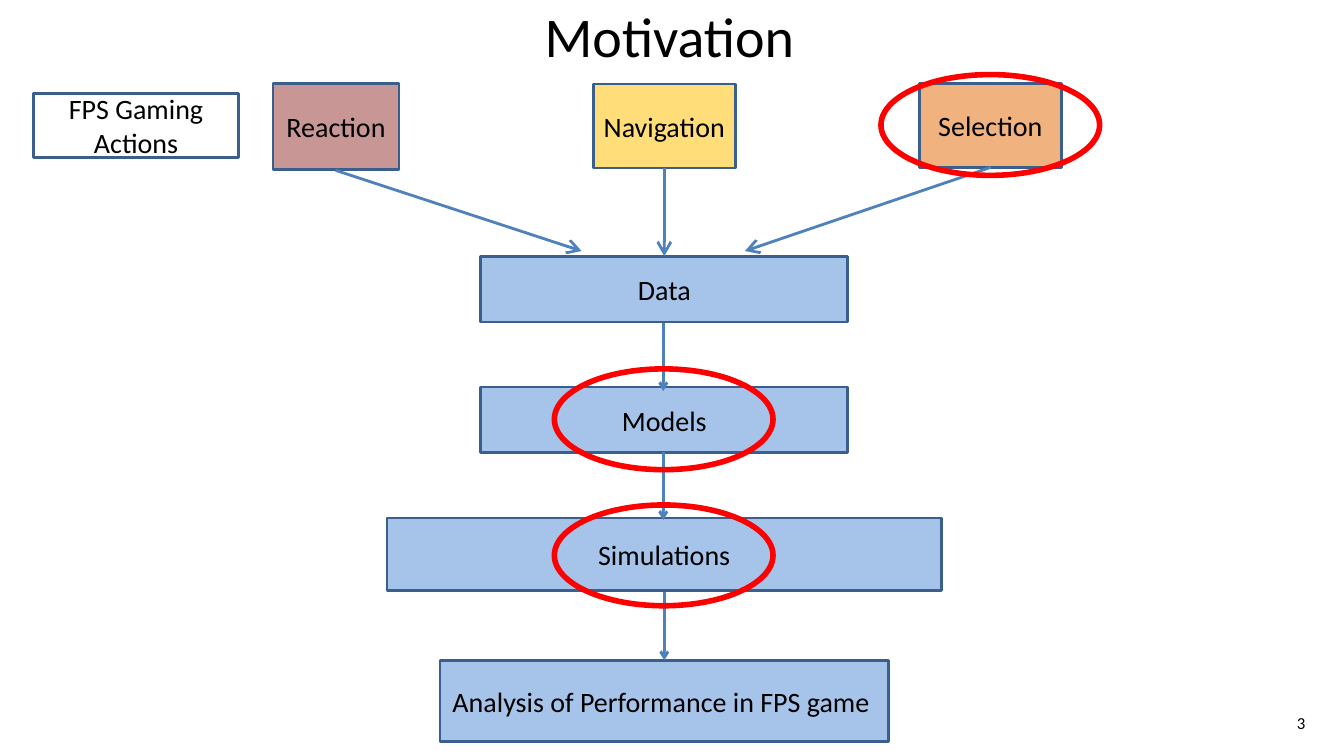
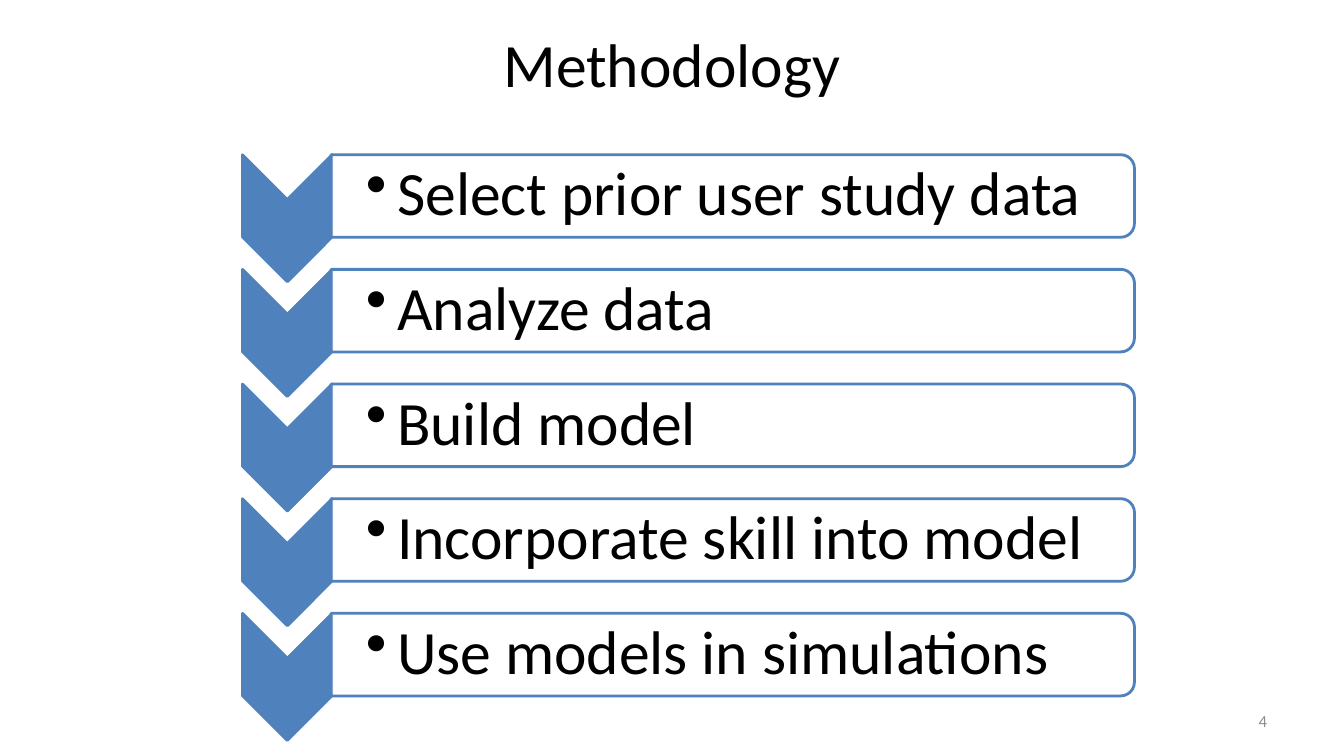
"""Build the motivation and methodology slides of a talk on first-person shooter games."""
from dataclasses import dataclass

from lxml.etree import SubElement
from pptx import Presentation
from pptx.dml.color import RGBColor
from pptx.enum.shapes import MSO_CONNECTOR, MSO_SHAPE
from pptx.enum.text import MSO_ANCHOR, PP_ALIGN
from pptx.oxml.ns import qn
from pptx.util import Pt

RECT, OVAL = MSO_SHAPE.RECTANGLE, MSO_SHAPE.OVAL
CHEVRON, TAB = MSO_SHAPE.CHEVRON, MSO_SHAPE.ROUND_2_SAME_RECTANGLE
STRAIGHT = MSO_CONNECTOR.STRAIGHT
LEFT, CENTER, RIGHT = PP_ALIGN.LEFT, PP_ALIGN.CENTER, PP_ALIGN.RIGHT
TOP, MIDDLE = MSO_ANCHOR.TOP, MSO_ANCHOR.MIDDLE


@dataclass(frozen=True)
class Theme:
    font: str = "Calibri"
    black: str = "000000"
    white: str = "FFFFFF"
    gray: str = "8C8C8C"
    blue: str = "4F81BD"
    edge: str = "3A5F8C"
    sky: str = "558ED5"
    wine: str = "953735"
    gold: str = "FFC000"
    orange: str = "E46C0A"
    red: str = "FF0000"
    small: int = 12
    label: int = 20
    title: int = 40
    large: int = 44
    line: int = 2
    ring: int = 4


theme = Theme()


def paint(shape, fill, line, width=theme.line, alpha=100):
    shape.shadow.inherit = False
    shape.line.color.rgb = RGBColor.from_string(line)
    shape.line.width = Pt(width)
    if fill is None:
        shape.fill.background()
        return
    shape.fill.solid()
    shape.fill.fore_color.rgb = RGBColor.from_string(fill)
    if alpha < 100:
        tint = next(shape.element.spPr.iter(qn("a:srgbClr")))
        SubElement(tint, qn("a:alpha"), val=str(alpha * 1000))


def write(shape, text, size, color=theme.black, align=CENTER, anchor=MIDDLE):
    frame = shape.text_frame
    frame.text = text
    frame.word_wrap = True
    frame.vertical_anchor = anchor
    para = frame.paragraphs[0]
    para.alignment = align
    para.font.name = theme.font
    para.font.size = Pt(size)
    para.font.color.rgb = RGBColor.from_string(color)
    return para


deck = Presentation()
deck.slide_width, deck.slide_height = Pt(960), Pt(540)

heads = [
    ("Motivation", theme.title, TOP, (0, -2.2, 956.2, 97.2),
     "3", theme.black, (723.6, 501.8, 216, 28.8)),
    ("Methodology", theme.large, MIDDLE, (48, 0, 864, 90),
     "4", theme.gray, (688.3, 500.4, 223.9, 28.8)),
]
slides = []
for text, size, anchor, place, number, color, corner in heads:
    slide = deck.slides.add_slide(deck.slide_layouts[5])
    title = slide.shapes.title
    title.left, title.top, title.width, title.height = map(Pt, place)
    write(title, text, size, anchor=anchor)
    page = slide.shapes.add_textbox(*map(Pt, corner))
    write(page, number, theme.small, color, RIGHT)
    slides.append(slide)

flow = slides[0].shapes
axis = 474.5
boxes = [
    ("FPS Gaming Actions", theme.white, 97.2, 67, 146.9, 45.4),
    ("Reaction", theme.wine, 240, 59.8, 90, 61.4),
    ("Navigation", theme.gold, axis, 60, 101.5, 60),
    ("Selection", theme.orange, 707.4, 59.8, 101.5, 60),
    ("Data", theme.sky, axis, 183, 262, 47),
    ("Models", theme.sky, axis, 276.5, 262, 47),
    ("Simulations", theme.sky, axis, 370, 396, 52),
    ("Analysis of Performance in FPS game ", theme.sky, axis, 471.6, 320.4, 58.3),
]
for text, fill, mid, top, width, height in boxes:
    box = flow.add_shape(RECT, Pt(mid - width / 2), Pt(top), Pt(width), Pt(height))
    paint(box, fill, theme.edge, alpha=52)
    write(box, text, theme.label)
    box.text_frame.margin_left = box.text_frame.margin_right = Pt(5)

arrows = [
    (239.8, 121.7, 415.4, 179.3, "lg"),
    (axis, 120.2, axis, 183, "lg"),
    (707.8, 119.5, 532.1, 179.3, "lg"),
    (473.8, 230.4, 473.8, 279.4, "med"),
    (473.8, 322.6, 473.8, 371.5, "med"),
    (axis, 422.6, axis, 471.6, "med"),
]
for *ends, size in arrows:
    arrow = flow.add_connector(STRAIGHT, *map(Pt, ends))
    arrow.line.color.rgb = RGBColor.from_string(theme.blue)
    arrow.line.width = Pt(theme.line)
    props = arrow.element.spPr
    SubElement(props.find(qn("a:ln")), qn("a:tailEnd"), type="arrow", w=size, len=size)
    SubElement(props, qn("a:effectLst"))

for left, top in [(629.3, 53.3), (396, 263.5), (396, 360.7)]:
    ring = flow.add_shape(OVAL, Pt(left), Pt(top), Pt(156.2), Pt(72))
    paint(ring, None, theme.red, theme.ring)

steps = [
    "Select prior user study data",
    "Analyze data",
    "Build model",
    "Incorporate skill into model",
    "Use models in simulations",
]
for index, text in enumerate(steps):
    mid = 140 + 81.9 * index
    parts = [
        (CHEVRON, theme.blue, 100, 205.2, mid + 15.9, 90.7, 64.1),
        (TAB, theme.white, 90, 523.4, mid, 59, 573.8),
    ]
    for kind, fill, alpha, across, down, width, height in parts:
        part = slides[1].shapes.add_shape(
            kind, Pt(across - width / 2), Pt(down - height / 2), Pt(width), Pt(height))
        part.rotation = 90
        paint(part, fill, theme.blue, alpha=alpha)
    step = slides[1].shapes.add_textbox(Pt(236.9), Pt(mid - 26.7), Pt(571), Pt(53.4))
    para = write(step, text, theme.large, align=LEFT)
    para.line_spacing = 0.9
    frame = step.text_frame
    frame.margin_left = Pt(24.5)
    frame.margin_top = frame.margin_right = frame.margin_bottom = Pt(2.2)
    props = next(step.element.iter(qn("a:pPr")))
    props.set("marL", str(Pt(22.3)))
    props.set("indent", str(-Pt(22.3)))
    bullet = SubElement(props, qn("a:buChar"), char="•")
    props.find(qn("a:defRPr")).addprevious(bullet)

deck.save("out.pptx")
